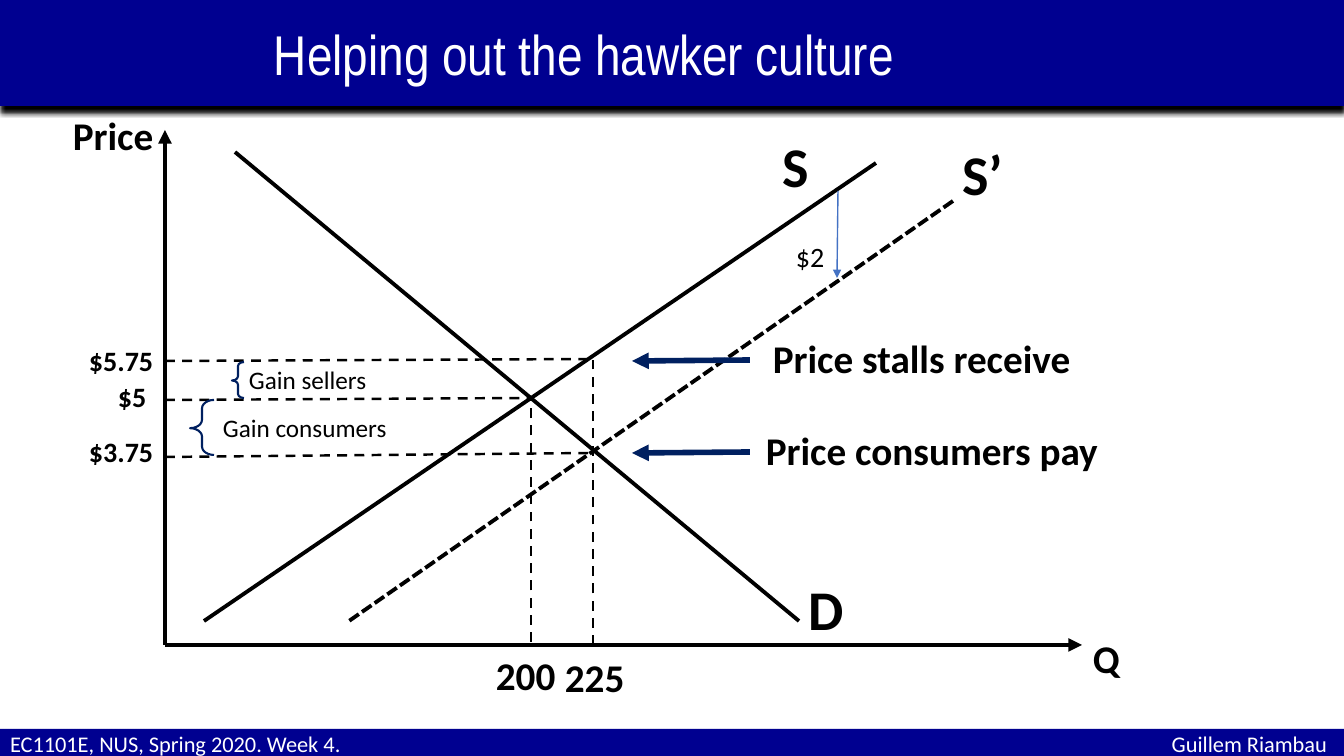
from typing import NamedTuple

from lxml.etree import SubElement
from pptx import Presentation
from pptx.dml.color import RGBColor
from pptx.enum.dml import MSO_LINE
from pptx.enum.shapes import MSO_CONNECTOR, MSO_SHAPE
from pptx.enum.text import MSO_ANCHOR, MSO_AUTO_SIZE, PP_ALIGN
from pptx.oxml.ns import qn
from pptx.util import Emu, Pt

SLIDE_WIDTH, SLIDE_HEIGHT = 1344, 756
EMU_PER_PX = 12192000 / SLIDE_WIDTH

BLACK, WHITE = "000000", "FFFFFF"
BAND_BLUE, NAVY, ARROW_BLUE = "000090", "002060", "4472C4"

AXIS_X, AXIS_Y = 165, 645
QUANTITY_BEFORE, QUANTITY_AFTER = 531, 593


class Segment(NamedTuple):
    start: tuple[int, int]
    end: tuple[int, int]
    width: float
    color: str = BLACK
    dash: MSO_LINE | None = None
    arrow: bool = False


class Label(NamedTuple):
    text: str
    left: int
    top: int
    size: int
    bold: bool = True
    width: int = 153


class Brace(NamedTuple):
    left: int
    top: int
    width: int
    height: int


class Band(NamedTuple):
    top: int
    height: int
    inset: int
    font: str
    size: int
    runs: tuple[str, ...]


def guide(start: tuple[int, int], end: tuple[int, int]) -> Segment:
    return Segment(start, end, 1.75, dash=MSO_LINE.DASH)


SEGMENTS = [
    Segment((AXIS_X, AXIS_Y), (AXIS_X, 130), 3.25, arrow=True),
    Segment((AXIS_X, AXIS_Y), (1082, AXIS_Y), 3.25, arrow=True),
    Segment((799, 621), (235, 152), 2.75),
    Segment((204, 621), (876, 163), 2.75),
    Segment((953, 201), (349, 621), 2.75, dash=MSO_LINE.SQUARE_DOT),
    guide((AXIS_X, 400), (QUANTITY_BEFORE, 398)),
    guide((QUANTITY_BEFORE, 642), (QUANTITY_BEFORE, 400)),
    guide((AXIS_X, 457), (QUANTITY_AFTER, 453)),
    guide((AXIS_X, 361), (QUANTITY_AFTER, 359)),
    guide((QUANTITY_AFTER, AXIS_Y), (QUANTITY_AFTER, 357)),
    Segment((838, 191), (837, 278), 1, ARROW_BLUE, arrow=True),
    Segment((750, 452), (632, 453), 4, NAVY, arrow=True),
    Segment((750, 360), (632, 361), 4, NAVY, arrow=True),
]

LABELS = [
    Label("Price", 63, 106, 28),
    Label("Q", 1083, 629, 28),
    Label("D", 799, 570, 40),
    Label("S", 773, 127, 40),
    Label("S’", 953, 135, 40),
    Label("$5.75", 79, 339, 20),
    Label("$5", 108, 375, 20),
    Label("$3.75", 79, 430, 20),
    Label("200", 486, 646, 28),
    Label("225", 555, 648, 28),
    Label("$2", 786, 235, 20, bold=False),
    Label("Price stalls receive", 763, 329, 28, width=433),
    Label("Price consumers pay", 756, 421, 28, width=380),
    Label("Gain sellers", 239, 359, 18, bold=False, width=380),
    Label("Gain consumers", 213, 407, 18, bold=False, width=380),
]

BRACES = [Brace(190, 400, 24, 55), Brace(232, 362, 12, 36)]

TITLE = Band(0, 106, 274, "Arial Narrow", 40, ("Helping out the hawker culture",))
FOOTER = Band(729, 30, 10, "Calibri", 16,
              ("EC1101E, NUS, Spring 2020. Week 4.", "\tGuillem Riambau"))
FOOTER_TAB = 1317


def px(length: float) -> Emu:
    return Emu(round(length * EMU_PER_PX))


def rgb(color: str) -> RGBColor:
    return RGBColor.from_string(color)


def add_run(paragraph, text: str, font: str, size: int, color: str, bold: bool = False) -> None:
    run = paragraph.add_run()
    run.text = text
    run.font.name = font
    run.font.size = Pt(size)
    run.font.bold = bold
    run.font.color.rgb = rgb(color)


def add_segment(slide, segment: Segment) -> None:
    connector = slide.shapes.add_connector(
        MSO_CONNECTOR.STRAIGHT, *map(px, segment.start + segment.end))
    connector.line.width = Pt(segment.width)
    connector.line.color.rgb = rgb(segment.color)
    if segment.dash is not None:
        connector.line.dash_style = segment.dash
    properties = connector.element.spPr
    if segment.arrow:
        SubElement(properties.find(qn("a:ln")), qn("a:tailEnd"), type="triangle")
    SubElement(properties, qn("a:effectLst"))


def add_label(slide, label: Label) -> None:
    height = label.size * 1.7 + 10
    text_box = slide.shapes.add_textbox(
        px(label.left), px(label.top), px(label.width), px(height))
    frame = text_box.text_frame
    frame.word_wrap = True
    frame.auto_size = MSO_AUTO_SIZE.SHAPE_TO_FIT_TEXT
    add_run(frame.paragraphs[0], label.text, "Calibri", label.size, BLACK, label.bold)


def add_brace(slide, brace: Brace) -> None:
    shape = slide.shapes.add_shape(MSO_SHAPE.LEFT_BRACE, *map(px, brace))
    shape.shadow.inherit = False
    shape.fill.background()
    shape.line.color.rgb = rgb(NAVY)
    shape.line.width = Pt(1.5)
    shape.adjustments[0] = 0.348
    shape.adjustments[1] = 0.514


def add_drop_shadow(shape) -> None:
    """Cast a solid black shadow straight down from the shape."""
    shape.shadow.inherit = False
    effects = shape.element.spPr.find(qn("a:effectLst"))
    shadow = SubElement(effects, qn("a:outerShdw"), blurRad=str(Pt(4)),
                        dist=str(Pt(4)), dir="5400000", rotWithShape="0")
    SubElement(shadow, qn("a:srgbClr"), val=BLACK)


def add_band(slide, band: Band, right_tab: int | None = None) -> None:
    shape = slide.shapes.add_shape(
        MSO_SHAPE.RECTANGLE, 0, px(band.top), px(SLIDE_WIDTH), px(band.height))
    shape.fill.solid()
    shape.fill.fore_color.rgb = rgb(BAND_BLUE)
    shape.line.fill.background()
    add_drop_shadow(shape)
    frame = shape.text_frame
    frame.word_wrap = True
    frame.vertical_anchor = MSO_ANCHOR.MIDDLE
    frame.margin_left = px(band.inset)
    paragraph = frame.paragraphs[0]
    paragraph.alignment = PP_ALIGN.LEFT
    if right_tab is not None:
        tabs = SubElement(paragraph._p.get_or_add_pPr(), qn("a:tabLst"))
        SubElement(tabs, qn("a:tab"), pos=str(px(right_tab)), algn="r")
    for text in band.runs:
        add_run(paragraph, text, band.font, band.size, WHITE)


def main() -> None:
    presentation = Presentation()
    presentation.slide_width = px(SLIDE_WIDTH)
    presentation.slide_height = px(SLIDE_HEIGHT)
    slide = presentation.slides.add_slide(presentation.slide_layouts[6])
    add_band(slide, FOOTER, FOOTER_TAB)
    add_band(slide, TITLE)
    for segment in SEGMENTS:
        add_segment(slide, segment)
    for brace in BRACES:
        add_brace(slide, brace)
    for label in LABELS:
        add_label(slide, label)
    presentation.save("out.pptx")


if __name__ == "__main__":
    main()
